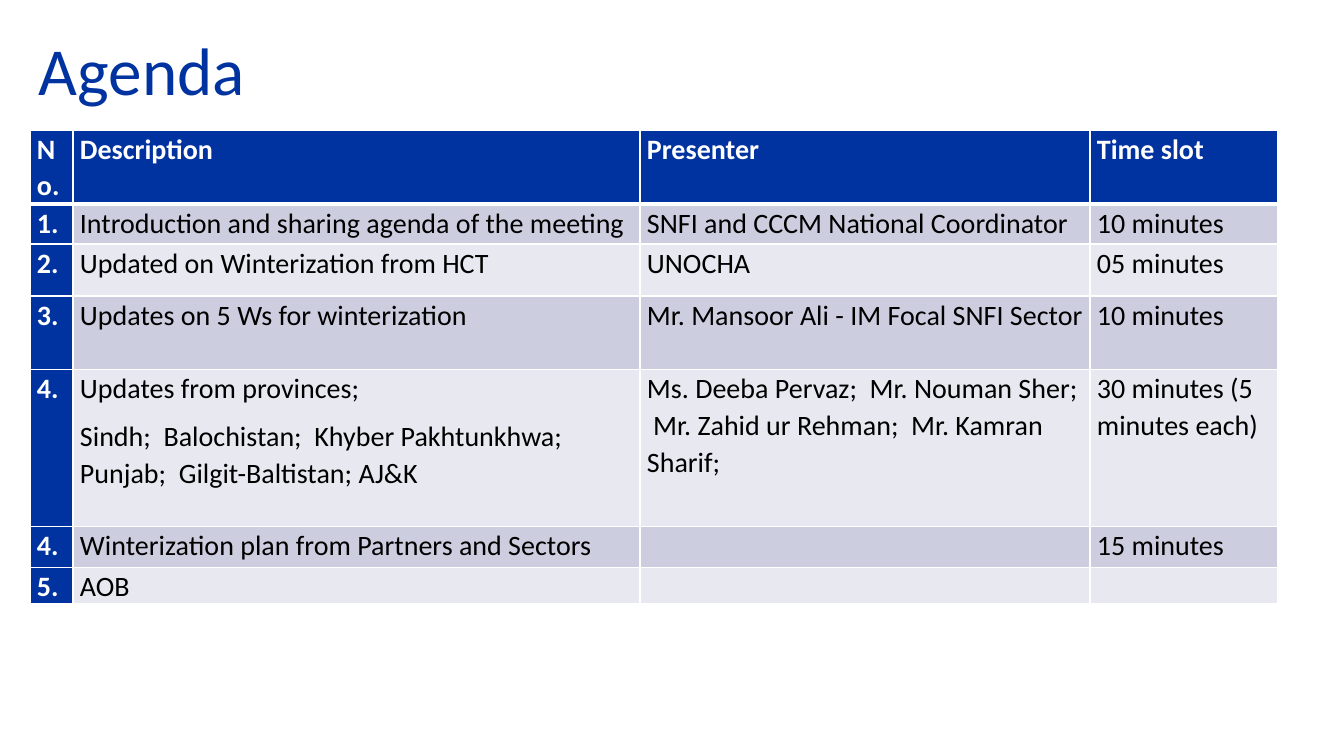
import dataclasses

import lxml.etree
import pptx
import pptx.dml.color
import pptx.enum.text
import pptx.oxml.ns
import pptx.util

BLUE = pptx.dml.color.RGBColor(0x00, 0x33, 0xA0)
WHITE = pptx.dml.color.RGBColor(0xFF, 0xFF, 0xFF)
BLACK = pptx.dml.color.RGBColor(0x00, 0x00, 0x00)
BAND_DARK = pptx.dml.color.RGBColor(0xCC, 0xCE, 0xDF)
BAND_LIGHT = pptx.dml.color.RGBColor(0xE7, 0xE8, 0xF0)
EMU_PER_PX = 914400 / 100.8
FONT = "Calibri"
BORDER_PT = 1
HEADER_BORDER_PT = 3
COLUMN_WIDTHS = (43, 567, 450, 188)


@dataclasses.dataclass(frozen=True)
class AgendaRow:
    height: int
    number: str
    description: str
    presenter: str = ""
    time_slot: str = ""

    def texts(self) -> tuple[str, ...]:
        return self.number, self.description, self.presenter, self.time_slot


AGENDA = (
    AgendaRow(74, "No.", "Description", "Presenter", "Time slot"),
    AgendaRow(40, "1.", "Introduction and sharing agenda of the meeting",
              "SNFI and CCCM National Coordinator", "10 minutes"),
    AgendaRow(52, "2.", "Updated on Winterization from HCT", "UNOCHA", "05 minutes"),
    AgendaRow(74, "3.", "Updates on 5 Ws for winterization",
              "Mr. Mansoor Ali - IM Focal SNFI Sector", "10 minutes"),
    AgendaRow(157, "4.",
              "Updates from provinces;\n"
              "Sindh;  Balochistan;  Khyber Pakhtunkhwa; Punjab;  Gilgit-Baltistan; AJ&K",
              "Ms. Deeba Pervaz;  Mr. Nouman Sher;  Mr. Zahid ur Rehman;  Mr. Kamran Sharif;",
              "30 minutes (5 minutes each)"),
    AgendaRow(41, "4.", "Winterization plan from Partners and Sectors",
              time_slot="15 minutes"),
    AgendaRow(36, "5.", "AOB"),
)


def px(n: int) -> pptx.util.Emu:
    return pptx.util.Emu(round(n * EMU_PER_PX))


def apply_format(target: object, values: dict[str, object]) -> None:
    for name, value in values.items():
        setattr(target, name, value)


def write_text(tf, text: str, size: int, color, bold: bool, paragraph: dict[str, object]) -> None:
    for i, line in enumerate(text.split("\n")):
        p = tf.add_paragraph() if i else tf.paragraphs[0]
        apply_format(p, paragraph)
        r = p.add_run()
        r.text = line
        apply_format(r.font, {"name": FONT, "size": pptx.util.Pt(size), "bold": bold})
        r.font.color.rgb = color


def add_borders(cell, widths: dict[str, int]) -> None:
    qn = pptx.oxml.ns.qn
    properties = cell._tc.get_or_add_tcPr()
    for side, width in widths.items():
        line = lxml.etree.SubElement(properties, qn(f"a:ln{side}"), w=str(pptx.util.Pt(width)))
        fill = lxml.etree.SubElement(line, qn("a:solidFill"))
        lxml.etree.SubElement(fill, qn("a:srgbClr"), val=str(WHITE))


def draw_title(s) -> None:
    tf = s.shapes.add_textbox(px(29), px(18), px(1216), px(112)).text_frame
    apply_format(tf, {"word_wrap": True,
                      "vertical_anchor": pptx.enum.text.MSO_ANCHOR.MIDDLE})
    write_text(tf, "Agenda", 48, BLUE, False, {"line_spacing": 0.9})


def draw_cell(cell, text: str, row: int, column: int) -> None:
    heading = row == 0 or column == 0
    apply_format(cell, {"margin_left": px(7), "margin_right": px(7),
                        "margin_top": 0, "margin_bottom": 0})
    add_borders(cell, {"L": BORDER_PT, "R": BORDER_PT,
                       "T": HEADER_BORDER_PT if row == 1 else BORDER_PT,
                       "B": HEADER_BORDER_PT if row == 0 else BORDER_PT})
    cell.fill.solid()
    cell.fill.fore_color.rgb = BLUE if heading else BAND_DARK if row % 2 else BAND_LIGHT
    if text:
        write_text(cell.text_frame, text, 20, WHITE if heading else BLACK, heading,
                   {"line_spacing": 1.07, "space_after": pptx.util.Pt(8)})


def draw_agenda(s) -> None:
    table = s.shapes.add_table(
        len(AGENDA), len(COLUMN_WIDTHS), px(30), px(130),
        px(sum(COLUMN_WIDTHS)), px(sum(row.height for row in AGENDA))).table
    for column, width in zip(table.columns, COLUMN_WIDTHS):
        column.width = px(width)
    for i, row in enumerate(AGENDA):
        table.rows[i].height = px(row.height)
        for j, text in enumerate(row.texts()):
            draw_cell(table.cell(i, j), text, i, j)


def main() -> None:
    prs = pptx.Presentation()
    apply_format(prs, {"slide_width": px(1344), "slide_height": px(756)})
    s = prs.slides.add_slide(prs.slide_layouts[6])
    draw_title(s)
    draw_agenda(s)
    prs.save("out.pptx")


if __name__ == "__main__":
    main()
